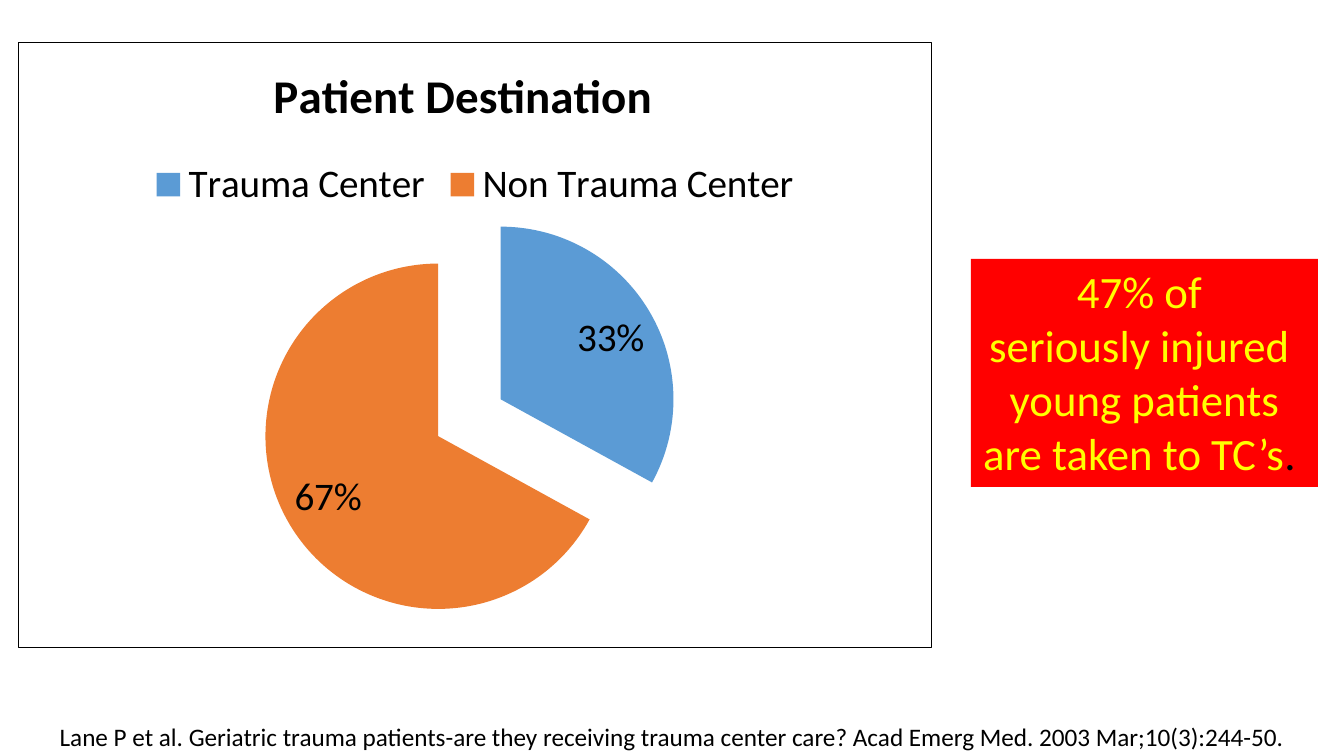
import pptx
import pptx.chart.data
import pptx.dml.color
import pptx.enum.chart
import pptx.enum.shapes
import pptx.enum.text
import pptx.oxml
import pptx.oxml.ns
import pptx.util
from dataclasses import dataclass

PX = 914400 / 100.8


@dataclass(frozen=True)
class Theme:
    font: str = "Calibri"
    black: str = "000000"
    red: str = "FF0000"
    yellow: str = "FFFF00"
    slices: tuple = ("5B9BD5", "ED7D31")
    title_size: float = 33.6
    chart_size: int = 28
    callout_size: int = 32
    citation_size: int = 18


theme = Theme()


def style(font, size, color):
    font.name = theme.font
    font.size = pptx.util.Pt(size)
    font.color.rgb = pptx.dml.color.RGBColor.from_string(color)


def layout_xml(target, **places):
    entries = "".join(f'<c:{name} val="{value}"/>' for name, value in places.items())
    return pptx.oxml.parse_xml(
        f'<c:layout {pptx.oxml.ns.nsdecls("c")}><c:manualLayout>{target}'
        f'<c:xMode val="edge"/><c:yMode val="edge"/>{entries}'
        '</c:manualLayout></c:layout>')


deck = pptx.Presentation()
deck.slide_width = round(1344 * PX)
deck.slide_height = round(756 * PX)
page = deck.slides.add_slide(deck.slide_layouts[6])

data = pptx.chart.data.CategoryChartData()
data.categories = ["Trauma Center", "Non Trauma Center"]
data.add_series("Series 1", (33, 67))
frame = [round(length * PX) for length in (18, 42, 914, 606)]
chart = page.shapes.add_chart(
    pptx.enum.chart.XL_CHART_TYPE.PIE, *frame, data).chart
style(chart.font, theme.chart_size, theme.black)

chart.has_title = True
title = chart.chart_title
title.include_in_layout = False
title.text_frame.text = "Patient Destination"
span = title.text_frame.paragraphs[0].runs[0]
style(span.font, theme.title_size, theme.black)
span.font.bold = True

chart.has_legend = True
chart.legend.position = pptx.enum.chart.XL_LEGEND_POSITION.TOP
chart.legend.include_in_layout = False
style(chart.legend.font, theme.chart_size, theme.black)

plot = chart.plots[0]
plot.vary_by_categories = True
series = plot.series[0]
for index, color in enumerate(theme.slices):
    fill = series.points[index].format.fill
    fill.solid()
    fill.fore_color.rgb = pptx.dml.color.RGBColor.from_string(color)
first_point = series._element.find(pptx.oxml.ns.qn("c:dPt"))
first_point.addprevious(pptx.oxml.parse_xml(
    f'<c:explosion {pptx.oxml.ns.nsdecls("c")} val="21"/>'))

plot.has_data_labels = True
labels = plot.data_labels
labels.show_percentage = True
labels.show_value = False
labels.number_format = "0%"
labels.number_format_is_linked = False
labels.position = pptx.enum.chart.XL_LABEL_POSITION.INSIDE_END
style(labels.font, theme.chart_size, theme.black)

chart_part = chart._chartSpace.find(pptx.oxml.ns.qn("c:chart"))
plot_area = chart_part.find(pptx.oxml.ns.qn("c:plotArea"))
for owner in (plot_area, title._element):
    for old in owner.findall(pptx.oxml.ns.qn("c:layout")):
        owner.remove(old)
plot_area.insert(0, layout_xml(
    '<c:layoutTarget val="inner"/>', x=0.265, y=0.275, w=0.458, h=0.691))
title._element.find(pptx.oxml.ns.qn("c:tx")).addnext(layout_xml("", x=0.27, y=0.02))
chart_part.addnext(pptx.oxml.parse_xml(
    f'<c:spPr {pptx.oxml.ns.nsdecls("c", "a")}><a:noFill/><a:ln w="9525">'
    f'<a:solidFill><a:srgbClr val="{theme.black}"/></a:solidFill></a:ln></c:spPr>'))

citation = page.shapes.add_textbox(
    *[round(length * PX) for length in (0, 716, 1344, 40)])
citation.text_frame.word_wrap = True
citation.text_frame.text = (
    "Lane P et al. Geriatric trauma patients-are they receiving trauma center care? "
    "Acad Emerg Med. 2003 Mar;10(3):244-50.")
para = citation.text_frame.paragraphs[0]
para.alignment = pptx.enum.text.PP_ALIGN.CENTER
style(para.runs[0].font, theme.citation_size, theme.black)

callout = page.shapes.add_shape(
    pptx.enum.shapes.MSO_SHAPE.RECTANGLE,
    *[round(length * PX) for length in (971, 259, 347, 228)])
callout.shadow.inherit = False
callout.fill.solid()
callout.fill.fore_color.rgb = pptx.dml.color.RGBColor.from_string(theme.red)
callout.line.fill.background()
callout.text_frame.word_wrap = True
callout.text_frame.auto_size = pptx.enum.text.MSO_AUTO_SIZE.SHAPE_TO_FIT_TEXT
callout.text_frame.vertical_anchor = pptx.enum.text.MSO_ANCHOR.TOP
callout.text_frame.text = (
    "47% of \nseriously injured \nyoung patients are taken to TC’s")
for para in callout.text_frame.paragraphs:
    para.alignment = pptx.enum.text.PP_ALIGN.CENTER
    style(para.runs[0].font, theme.callout_size, theme.yellow)
period = callout.text_frame.paragraphs[-1].add_run()
period.text = ".  "
style(period.font, theme.callout_size, theme.black)

deck.save("out.pptx")
